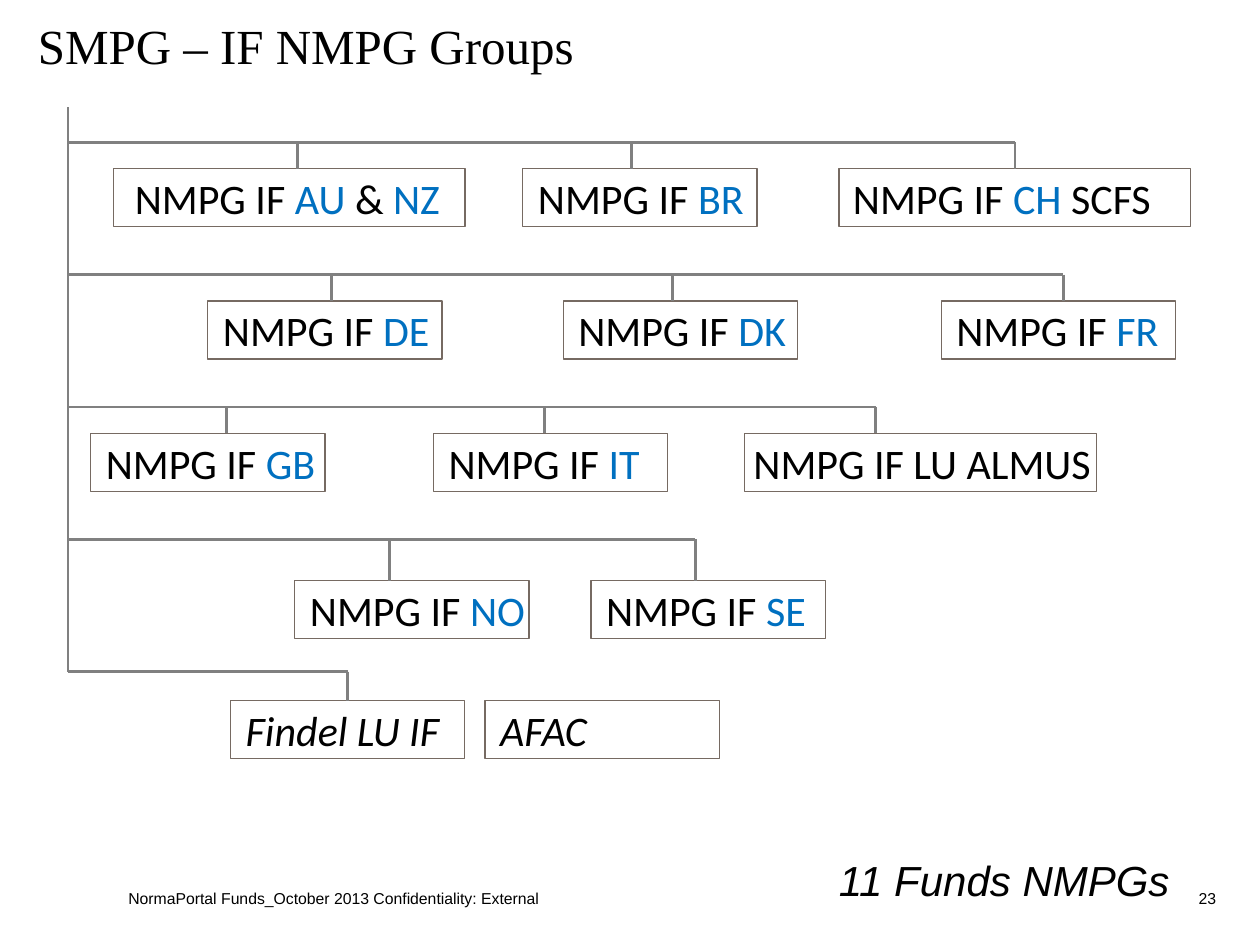
from dataclasses import dataclass

from pptx import Presentation
from pptx.dml.color import RGBColor
from pptx.enum.shapes import MSO_CONNECTOR as Connector, MSO_SHAPE as Shape
from pptx.enum.text import MSO_ANCHOR as Anchor, PP_ALIGN as Align
from pptx.oxml.ns import qn
from pptx.util import Inches, Pt

COLUMNS, ROWS = 100, 75
TRUNK, FIRST_RAIL, RAIL_PITCH = 5.4, 11.3, 10.5
BOX_HEIGHT, NARROW, WIDE = 4.6, 18.6, 27.9

# Each branch: drop from rail to boxes, then (label, left, width, text inset, stem column).
# A stem of None hangs from the middle of the box; a stem of 0 means no stem.
BRANCHES = [
    (2.1, [("NMPG IF |AU| & |NZ", 9, WIDE, 1.7, 23.6),
           ("NMPG IF |BR", 41.5, NARROW, 1.2, 50.1),
           ("NMPG IF |CH| SCFS", 66.6, WIDE, 1.1, None)]),
    (2.1, [("NMPG IF |DE", 16.5, NARROW, 1.2, 26.3),
           ("NMPG IF |DK", 44.7, NARROW, 1.2, 53.4),
           ("NMPG IF |FR", 74.7, NARROW, 1.2, 84.4)]),
    (2.1, [("NMPG IF |GB", 7.2, NARROW, 1.2, 18),
           ("NMPG IF |IT", 34.4, NARROW, 1.2, 43.2),
           ("NMPG IF LU ALMUS", 59.1, WIDE, 0.7, 69.5)]),
    (3.3, [("NMPG IF |NO", 23.4, NARROW, 1.2, 30.9),
           ("NMPG IF |SE", 46.9, NARROW, 1.2, 55.2)]),
    (2.3, [("Findel LU IF", 18.3, NARROW, 1.2, None),
           ("AFAC", 38.5, NARROW, 1.2, 0)]),
]


@dataclass(frozen=True)
class Theme:
    """Colours, fonts and type sizes of the slide."""
    ink: RGBColor = RGBColor(0x00, 0x00, 0x00)
    country: RGBColor = RGBColor(0x00, 0x70, 0xC0)
    paper: RGBColor = RGBColor(0xFF, 0xFF, 0xFF)
    border: RGBColor = RGBColor(0x76, 0x6A, 0x62)
    branch: RGBColor = RGBColor(0x80, 0x80, 0x80)
    title_font: str = "Times New Roman"
    label_font: str = "Calibri"
    note_font: str = "Arial"
    title_size: int = 28
    label_size: int = 24
    footer_size: int = 9


class OrgSlide:
    """Draws titles, notes, boxes and branches on a column and row grid."""

    def __init__(self, deck, theme):
        self.theme = theme
        self.slide = deck.slides.add_slide(deck.slide_layouts[5])
        self.column = deck.slide_width / COLUMNS
        self.row = deck.slide_height / ROWS

    def area(self, left, top, width, height):
        return (round(left * self.column), round(top * self.row),
                round(width * self.column), round(height * self.row))

    def style(self, run, font, size, color, italic=False):
        run.font.name, run.font.size, run.font.italic = font, Pt(size), italic
        run.font.color.rgb = color

    def title(self, text, *area):
        heading = self.slide.shapes.title
        heading.left, heading.top, heading.width, heading.height = self.area(*area)
        frame = heading.text_frame
        frame.text = text
        frame.word_wrap = False
        frame.vertical_anchor = Anchor.MIDDLE
        paragraph = frame.paragraphs[0]
        paragraph.alignment, paragraph.line_spacing = Align.LEFT, 0.9
        self.style(paragraph.runs[0], self.theme.title_font, self.theme.title_size, self.theme.ink)

    def note(self, text, *area, size, align=Align.LEFT, italic=False):
        frame = self.slide.shapes.add_textbox(*self.area(*area)).text_frame
        frame.text = text
        frame.word_wrap = True
        frame.vertical_anchor = Anchor.MIDDLE
        frame.paragraphs[0].alignment = align
        self.style(frame.paragraphs[0].runs[0], self.theme.note_font, size, self.theme.ink, italic)

    def line(self, x1, y1, x2, y2):
        ends = self.area(x1, y1, x2, y2)
        connector = self.slide.shapes.add_connector(Connector.STRAIGHT, *ends)
        connector.line.color.rgb = self.theme.branch
        connector.line.width = Pt(1.5)
        properties = connector._element.spPr
        properties.append(properties.makeelement(qn("a:effectLst"), {}))
        return connector

    def box(self, label, left, top, width, inset, italic=False):
        box = self.slide.shapes.add_shape(
            Shape.RECTANGLE, *self.area(left, top, width, BOX_HEIGHT))
        box.shadow.inherit = False
        box.fill.solid()
        box.fill.fore_color.rgb = self.theme.paper
        box.line.color.rgb = self.theme.border
        box.line.width = Pt(0.75)
        frame = box.text_frame
        frame.word_wrap = True
        frame.vertical_anchor = Anchor.MIDDLE
        frame.margin_left = round(inset * self.column)
        frame.margin_right = frame.margin_top = frame.margin_bottom = 0
        paragraph = frame.paragraphs[0]
        paragraph.alignment = Align.LEFT
        for index, part in enumerate(label.split("|")):
            run = paragraph.add_run()
            run.text = part
            color = self.theme.country if index % 2 else self.theme.ink
            self.style(run, self.theme.label_font, self.theme.label_size, color, italic)
        return box

    def branch(self, rail, drop, groups, italic):
        top = rail + drop
        stems = []
        for label, left, width, inset, stem in groups:
            group = self.box(label, left, top, width, inset, italic)
            if stem == 0:
                continue
            stems.append(stem or left + width / 2)
            hanger = self.line(stems[-1], rail, stems[-1], top)
            if stem is None:
                hanger.end_connect(group, 0)
        self.line(TRUNK, rail, max(stems), rail)


def main():
    """Build the slide and save it."""
    deck = Presentation()
    deck.slide_width, deck.slide_height = Inches(10), Inches(7.5)
    theme = Theme()
    chart = OrgSlide(deck, theme)
    chart.title("SMPG – IF NMPG Groups", 2, 0.6, 96.7, 6.6)
    last = len(BRANCHES) - 1
    for index, (drop, groups) in enumerate(BRANCHES):
        chart.branch(FIRST_RAIL + index * RAIL_PITCH, drop, groups, italic=index == last)
    chart.line(TRUNK, 8.5, TRUNK, FIRST_RAIL + last * RAIL_PITCH)
    chart.note("NormaPortal Funds_October 2013 Confidentiality: External",
               9.2, 70, 62.1, 2.5, size=theme.footer_size)
    chart.note("23", 89.2, 70, 8.3, 2.5, size=theme.footer_size, align=Align.RIGHT)
    chart.note("11 Funds NMPGs", 65.6, 67.3, 29.5, 5, size=theme.label_size, italic=True)
    deck.save("out.pptx")


if __name__ == "__main__":
    main()
